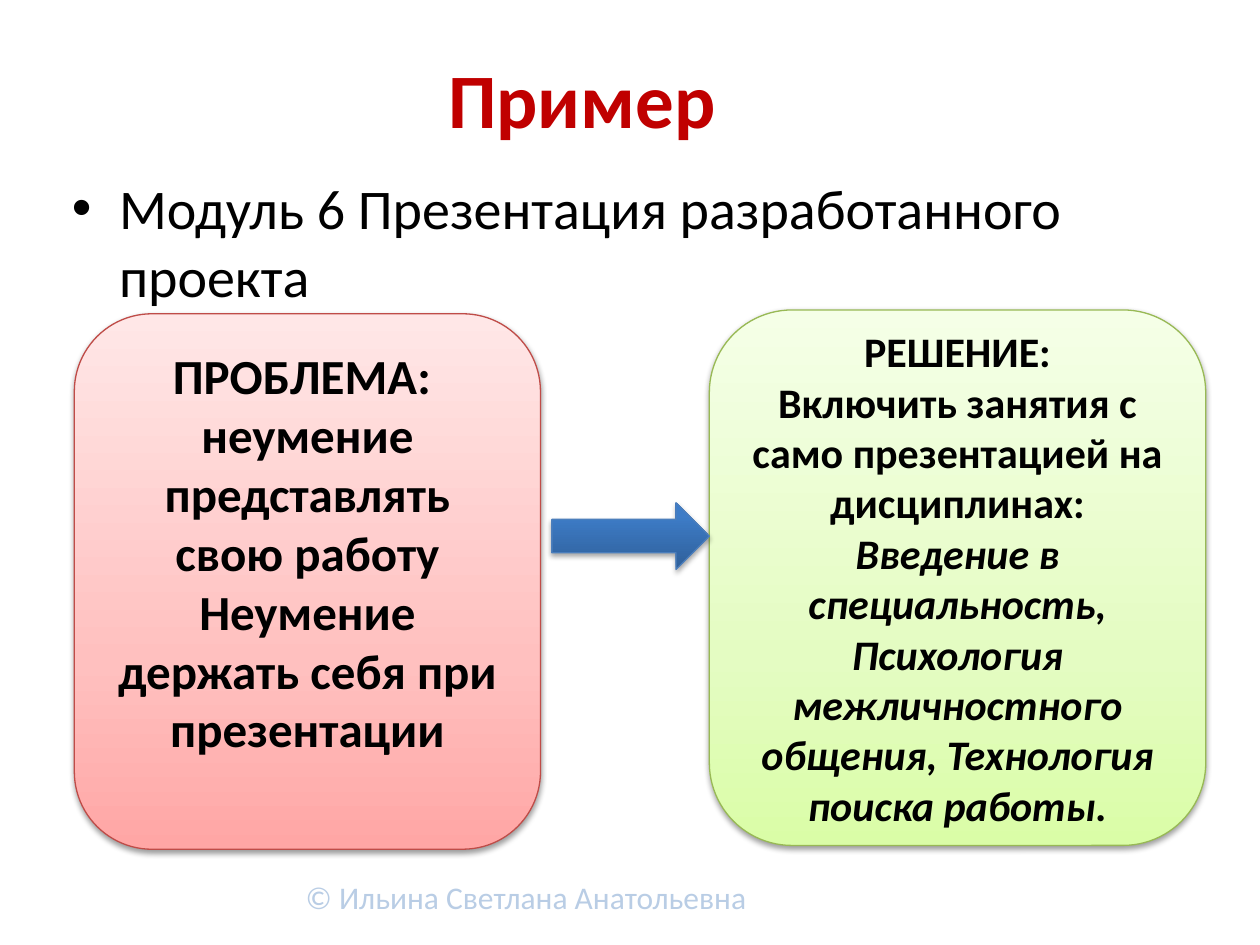
import copy

import pptx
import pptx.dml.color
import pptx.enum.shapes
import pptx.enum.text
import pptx.oxml
import pptx.oxml.ns
import pptx.util

RGBColor = pptx.dml.color.RGBColor
Inches = pptx.util.Inches
SHAPE = pptx.enum.shapes.MSO_SHAPE
ALIGN = pptx.enum.text.PP_ALIGN
MIDDLE = pptx.enum.text.MSO_ANCHOR.MIDDLE

BLACK = RGBColor(0x00, 0x00, 0x00)
TITLE_RED = RGBColor(0xC0, 0x00, 0x00)
FOOTER_BLUE = RGBColor(0xB9, 0xCD, 0xE5)
RED_LINE = RGBColor(0xBF, 0x4C, 0x48)
GREEN_LINE = RGBColor(0x98, 0xB9, 0x55)
BLUE_LINE = RGBColor(0x4B, 0x7E, 0xBC)

# Gradients run from the bottom edge to the top: (position, colour)
RED_FILL = [(0, RGBColor(0xFF, 0xA6, 0xA5)), (0.35, RGBColor(0xFF, 0xC0, 0xBF)),
            (1, RGBColor(0xFF, 0xE7, 0xE7))]
GREEN_FILL = [(0, RGBColor(0xDA, 0xFD, 0xA7)), (0.35, RGBColor(0xE4, 0xFC, 0xC2)),
              (1, RGBColor(0xF5, 0xFF, 0xE7))]
BLUE_FILL = [(0, RGBColor(0x2F, 0x5F, 0x99)), (0.8, RGBColor(0x3D, 0x7C, 0xC7)),
             (1, RGBColor(0x3A, 0x7C, 0xCB))]


def place(shape, left, top, width, height):
    shape.left, shape.top = Inches(left), Inches(top)
    shape.width, shape.height = Inches(width), Inches(height)


def write(paragraph, text, size, color=BLACK, bold=False, italic=False, align=None):
    """Add one formatted run to a paragraph."""
    run = paragraph.add_run()
    run.text = text
    run.font.name = "Calibri"
    run.font.size = pptx.util.Pt(size)
    run.font.color.rgb = color
    run.font.bold = bold
    run.font.italic = italic
    if align is not None:
        paragraph.alignment = align


def add_shadow(shape, opacity, distance):
    shape.shadow.inherit = False
    effects = shape._element.spPr.find(pptx.oxml.ns.qn("a:effectLst"))
    effects.append(pptx.oxml.parse_xml(
        f'<a:outerShdw {pptx.oxml.ns.nsdecls("a")} blurRad="{pptx.util.Pt(3.1)}" '
        f'dist="{pptx.util.Pt(distance)}" dir="5400000" rotWithShape="0">'
        f'<a:srgbClr val="000000"><a:alpha val="{opacity * 1000}"/></a:srgbClr>'
        '</a:outerShdw>'))


def add_gradient_shape(slide, kind, box, stops, line_color, opacity=38, distance=1.6):
    shape = slide.shapes.add_shape(kind, *map(Inches, box))
    shape.fill.gradient()
    shape.fill.gradient_angle = 90
    # The default gradient has two stops; a middle one is added
    stop_list = shape._element.spPr.find(".//" + pptx.oxml.ns.qn("a:gsLst"))
    stop_list.insert(1, copy.deepcopy(stop_list[0]))
    for stop, (position, color) in zip(shape.fill.gradient_stops, stops):
        stop.position = position
        stop.color.rgb = color
    shape.line.color.rgb = line_color
    shape.line.width = pptx.util.Pt(0.75)
    add_shadow(shape, opacity, distance)
    return shape


def add_panel(slide, box, stops, line_color, paragraphs, size, bottom=0.05):
    """Rounded panel; each paragraph is a list of (text, italic) parts."""
    panel = add_gradient_shape(slide, SHAPE.ROUNDED_RECTANGLE, box, stops, line_color)
    frame = panel.text_frame
    frame.word_wrap = True
    frame.vertical_anchor = MIDDLE
    frame.margin_bottom = Inches(bottom)
    for index, parts in enumerate(paragraphs):
        paragraph = frame.add_paragraph() if index else frame.paragraphs[0]
        for text, italic in parts:
            write(paragraph, text, size, bold=True, italic=italic, align=ALIGN.CENTER)


def add_footer(slide):
    footer = slide.shapes.add_textbox(*map(Inches, (1.95, 6.88, 4.45, 0.47)))
    frame = footer.text_frame
    frame.word_wrap = True
    frame.vertical_anchor = MIDDLE
    write(frame.paragraphs[0], "© Ильина Светлана Анатольевна", 18,
          color=FOOTER_BLUE, align=ALIGN.CENTER)


def main():
    deck = pptx.Presentation()
    deck.slide_width, deck.slide_height = Inches(10), Inches(7.5)
    slide = deck.slides.add_slide(deck.slide_layouts[1])
    add_footer(slide)

    # Title and module name
    title, module = slide.placeholders
    place(title, 1.64, 0.3, 5.96, 0.95)
    write(title.text_frame.paragraphs[0], "Пример", 44,
          color=TITLE_RED, bold=True, align=ALIGN.CENTER)
    place(module, 0.47, 1.33, 9, 1.16)
    write(module.text_frame.paragraphs[0],
          "Модуль 6 Презентация разработанного проекта", 32)

    # Problem, its text raised above the middle
    add_panel(slide, (0.59, 2.49, 3.7, 4.25), RED_FILL, RED_LINE,
              [[("ПРОБЛЕМА: ", False)],
               [("неумение представлять свою работу", False)],
               [("Неумение держать себя при презентации", False)]],
              size=28, bottom=0.52)

    # Solution
    add_panel(slide, (5.63, 2.46, 3.94, 4.25), GREEN_FILL, GREEN_LINE,
              [[("РЕШЕНИЕ:", False)],
               [("Включить занятия с само презентацией на дисциплинах: ", False),
                ("Введение в специальность, Психология межличностного общения, "
                 "Технология поиска работы.", True)]],
              size=24)

    # Arrow from problem to solution
    add_gradient_shape(slide, SHAPE.RIGHT_ARROW, (4.38, 3.99, 1.25, 0.53),
                       BLUE_FILL, BLUE_LINE, opacity=35, distance=1.8)

    deck.save("out.pptx")


if __name__ == "__main__":
    main()
